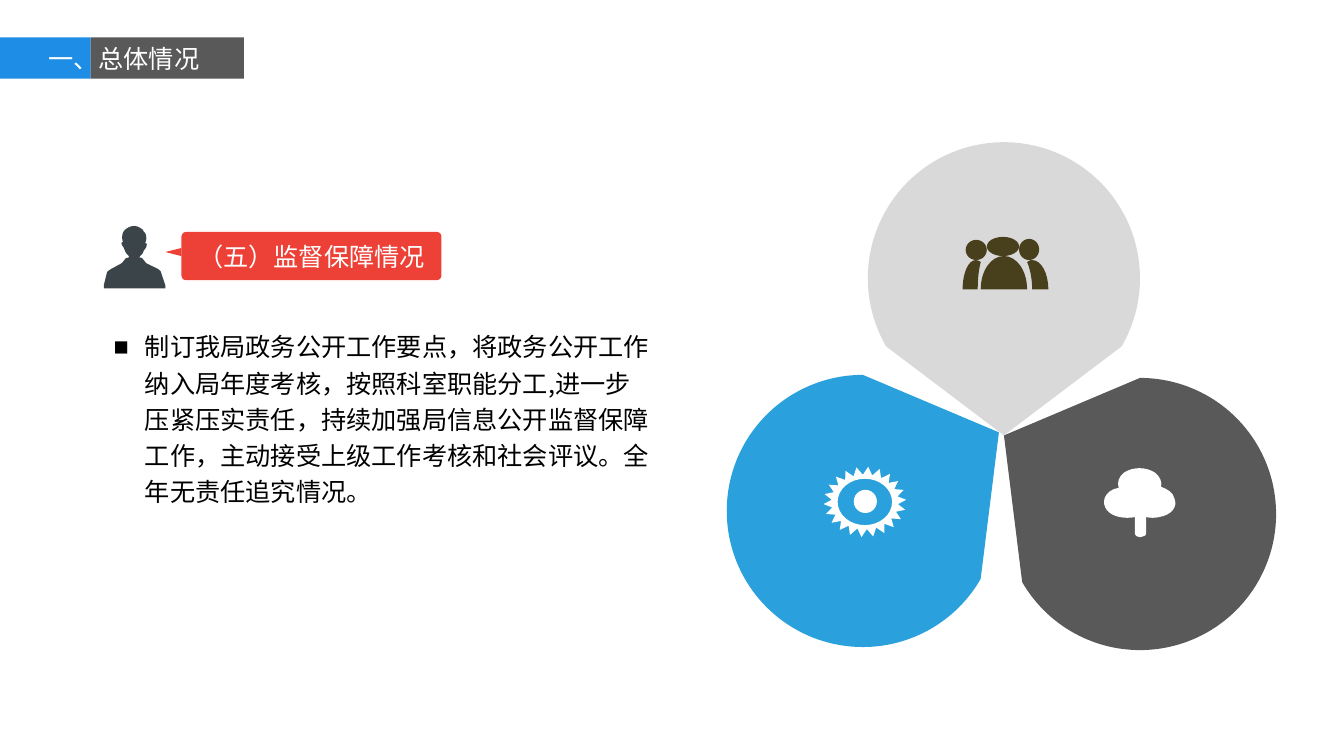
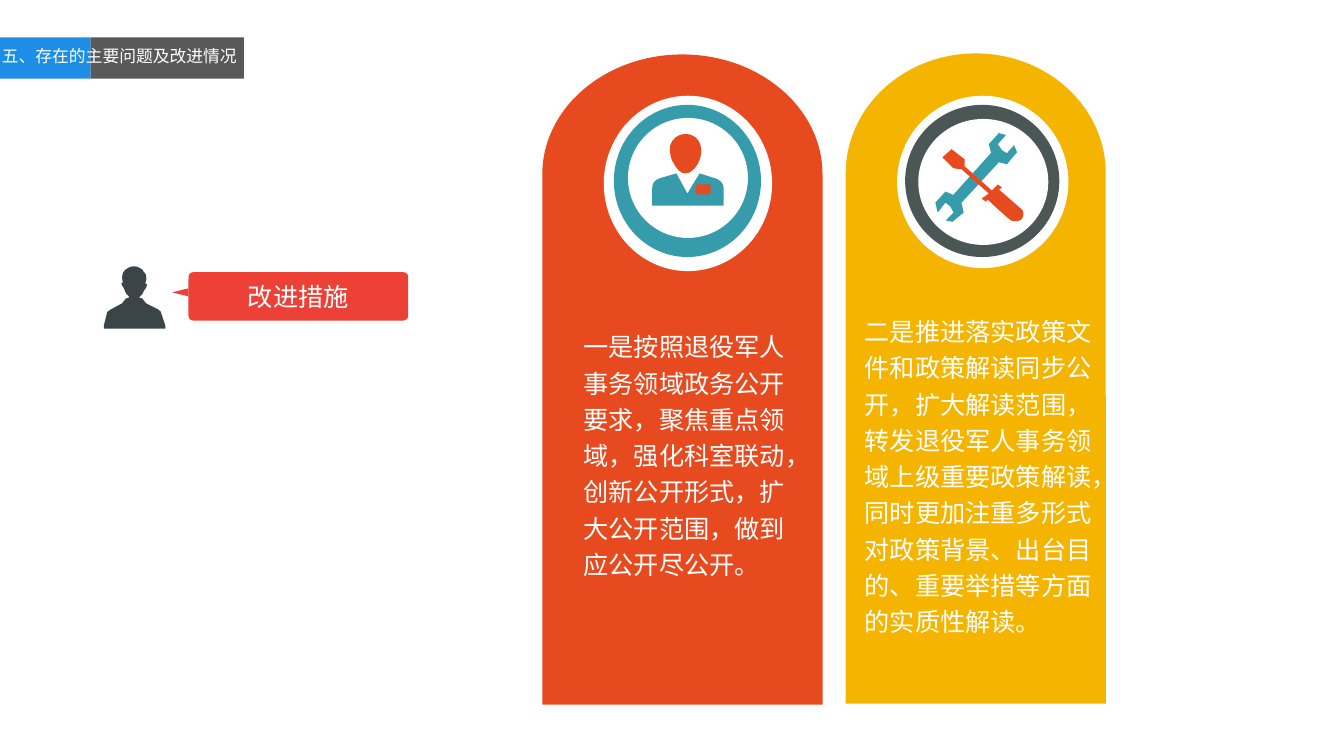
from dataclasses import dataclass
from math import cos, pi, radians, sin, tan

from lxml import etree
from pptx import Presentation
from pptx.dml.color import RGBColor
from pptx.enum.shapes import MSO_SHAPE as SHAPE
from pptx.enum.text import MSO_ANCHOR as ANCHOR, PP_ALIGN as ALIGN
from pptx.oxml.ns import qn
from pptx.util import Inches, Pt


@dataclass(frozen=True)
class Theme:
    white: str = "FFFFFF"
    ink: str = "000000"
    band_blue: str = "1D8DE5"
    dark_grey: str = "595959"
    light_grey: str = "D9D9D9"
    person: str = "3B4449"
    callout: str = "ED4137"
    petal_blue: str = "2AA1DC"
    olive: str = "483F1C"
    orange: str = "E84A1F"
    yellow: str = "F4B400"
    teal: str = "369CAB"
    slate: str = "4B5754"
    latin: str = "Arial"
    cjk: str = "Noto Sans CJK SC"
    body_size: int = 18
    small_size: int = 12


THEME = Theme()

# Icon outlines in hundredths of an inch from the icon's top left corner.
PERSON = """M 57 50 C 57 50 58 49 54 46 L 42 40 L 38 35 C 35 34 34 35 36 33
C 38 32 39 30 40 27 C 40 27 40 26 41 26 C 41 26 45 20 41 20 C 41 20 45 13 39 8
L 39 7 C 37 6 36 5 36 5 C 28 0 21 7 21 7 C 16 12 19 19 19 19 C 15 19 20 25 20 25
C 20 27 21 27 21 27 L 21 28 C 22 30 23 32 25 33 C 26 35 22 35 22 35 L 18 40
L 7 46 C 2 49 3 50 3 50 L 0 62 L 0 65 L 61 65 L 61 62"""
TEAM_BODIES = (
    "M 41 19 C 28 19 18 34 18 52 L 64 52 C 64 34 54 19 41 19",
    "M 18 25 C 17 24 15 23 13 23 C 6 23 0 35 0 52 L 15 52 C 15 42 16 32 18 25",
    "M 69 23 C 68 23 66 23 64 25 C 67 32 69 42 69 52 L 85 52 C 85 36 78 23 69 23",
)
TREE = """M 72 31 C 71 26 65 22 59 20 C 60 15 58 10 53 6 C 44 0 31 0 22 6
C 17 10 15 16 17 21 C 10 22 5 26 3 31 C 0 40 7 48 18 50 C 23 51 28 51 33 50
L 33 67 C 33 68 35 70 38 70 C 41 70 44 68 44 67 L 44 50 C 48 51 53 51 57 50
C 69 48 76 40 72 31"""
WRENCH = """M 78 12 L 81 19 L 71 31 L 63 29 L 26 69 L 28 79 L 17 88 L 11 87
L 11 86 L 18 79 L 15 73 L 10 69 L 3 78 L 2 78 L 0 69 L 10 58 L 17 61 L 18 61
L 55 20 L 55 19 L 53 11 L 63 0 L 70 2 L 62 11 L 66 17 L 71 20"""
SCREWDRIVER = """M 29 33 L 56 57 L 62 51 L 66 54 L 63 56 L 86 76
C 88 78 88 83 85 86 C 82 88 76 88 74 86 C 67 80 59 73 52 66 L 50 68 L 46 65
L 53 60 L 26 36 L 18 35 L 7 24 L 16 16 L 29 26"""
OFFICIAL_SUIT = """M 0 54 C 0 49 2 46 7 44 L 24 39 L 35 59 L 47 39 L 63 44
C 68 46 71 49 71 54 L 71 71 L 0 71"""
OFFICIAL_HEAD = """M 33 39 C 28 39 25 35 22 30 C 18 25 17 17 18 11
C 20 5 25 0 33 0 C 42 0 46 5 48 11 C 50 17 48 25 45 30 C 42 35 38 39 33 39"""
OFFICIAL_BADGE = """M 45 50 L 57 50 C 58 50 58 51 58 52 L 58 58 C 58 59 58 60 57 60
L 45 60 C 44 60 43 59 43 58 L 43 52 C 43 51 44 50 45 50"""


def paint(shape, color):
    shape.fill.solid()
    shape.fill.fore_color.rgb = RGBColor.from_string(color)
    shape.line.fill.background()
    shape.shadow.inherit = False
    return shape


def add_preset(slide, kind, box, color):
    return paint(slide.shapes.add_shape(kind, *map(Inches, box)), color)


def add_outline(slide, color, *contours):
    """Fill contours, each a list of (command, points) steps in inches."""
    pen = None
    for (_, (start,)), *steps in contours:
        if pen is None:
            pen = slide.shapes.build_freeform(*map(Inches, start), scale=1.0)
        else:
            pen.move_to(*map(Inches, start))
        pen.add_line_segments([tuple(map(Inches, point))
                               for _, points in steps for point in points], close=True)
    shape = paint(pen.convert_to_shape(), color)
    lines = iter(list(shape._element.iter(qn("a:lnTo"))))
    for contour in contours:
        for command, points in contour[1:]:
            parts = [next(lines) for _ in points]
            if command == "C":
                bend_lines(parts)


def bend_lines(parts):
    """Merge three line elements into one cubic curve."""
    curve = etree.Element(qn("a:cubicBezTo"))
    parts[0].addprevious(curve)
    for part in parts:
        curve.append(part[0])
        part.getparent().remove(part)


def add_icon(slide, drawing, left, top, color):
    steps, tokens = [], iter(drawing.split())
    for command in tokens:
        count = 3 if command == "C" else 1
        steps.append((command, [(left + float(next(tokens)) / 100,
                                 top + float(next(tokens)) / 100)
                                for _ in range(count)]))
    add_outline(slide, color, steps)


def arc(cx, cy, rx, ry, start, end, pieces):
    """Elliptical arc as a first point followed by cubic curves."""
    turn = radians(end - start) / pieces
    pull = 4 / 3 * tan(turn / 4)

    def at(angle, along=0):
        return (cx + rx * (cos(angle) - along * sin(angle)),
                cy + ry * (sin(angle) + along * cos(angle)))

    angles = [radians(start) + turn * i for i in range(pieces + 1)]
    return [("M", [at(angles[0])])] + [
        ("C", [at(a, pull), at(b, -pull), at(b)]) for a, b in zip(angles, angles[1:])]


def write(frame, text, *, size=THEME.body_size, color=THEME.white, font=THEME.latin,
          align=None, spacing=None, bullet=None, indent=0.31):
    paragraph = frame.paragraphs[0]
    if bullet:
        props = paragraph._p.get_or_add_pPr()
        props.set("marL", str(Inches(indent)))
        props.set("indent", str(-Inches(indent)))
        etree.SubElement(props, qn("a:buFont")).set("typeface", THEME.latin)
        etree.SubElement(props, qn("a:buChar")).set("char", bullet)
    if align is not None:
        paragraph.alignment = align
    if spacing:
        paragraph.line_spacing = spacing
    run = paragraph.add_run()
    run.text = text
    run.font.size = Pt(size)
    run.font.name = font
    run.font.color.rgb = RGBColor.from_string(color)
    east_asian = etree.SubElement(run._r.get_or_add_rPr(), qn("a:ea"))
    east_asian.set("typeface", THEME.cjk)


def add_text(slide, text, box, *, wrap=True, **style):
    frame = slide.shapes.add_textbox(*map(Inches, box)).text_frame
    frame.word_wrap = wrap
    write(frame, text, **style)


def add_layout_bands(layout, slide):
    """Give the layout the two title bands, drawn by way of a slide."""
    for placeholder in list(layout.placeholders):
        layout.shapes._spTree.remove(placeholder._element)
    bands = [add_preset(slide, SHAPE.RECTANGLE, (left, 0.37, width, 0.41), color)
             for left, width, color in ((0, 0.9, THEME.band_blue),
                                        (0.9, 1.52, THEME.dark_grey))]
    for band in bands:
        layout.shapes._spTree.append(band._element)


def add_speaker(slide, label, left, top, width):
    """Person with a speech label whose box starts at left, top."""
    add_icon(slide, PERSON, 1.03, top - 0.09, THEME.person)
    bubble = add_preset(slide, SHAPE.ROUNDED_RECTANGLE, (left, top, width, 0.48),
                        THEME.callout)
    bubble.adjustments[0] = 0.1
    frame = bubble.text_frame
    frame.margin_left = frame.margin_right = frame.margin_top = frame.margin_bottom = 0
    frame.vertical_anchor = ANCHOR.MIDDLE
    write(frame, label, font=THEME.cjk, align=ALIGN.CENTER)
    pointer = add_preset(slide, SHAPE.ISOSCELES_TRIANGLE,
                         (left - 0.12, top + 0.12, 0.08, 0.16), THEME.callout)
    pointer.rotation = 270


def add_petal(slide, tip, direction, color, radius=1.35):
    """Circle drawn out to a 120 degree tip, lying in a direction from that tip."""
    reach, angle = 2 * radius / 3 ** 0.5, radians(direction)
    cx, cy = tip[0] + reach * cos(angle), tip[1] + reach * sin(angle)
    edge = arc(cx, cy, radius, radius, direction - 120, direction + 120, 4)
    add_outline(slide, color, [*edge, ("L", [tip])])


def add_team(slide, left, top):
    for x, y, width, height in ((0.24, 0, 0.32, 0.19), (0.56, 0.02, 0.2, 0.21),
                                (0.03, 0.03, 0.21, 0.2)):
        add_preset(slide, SHAPE.OVAL, (left + x, top + y, width, height), THEME.olive)
    for body in TEAM_BODIES:
        add_icon(slide, body, left, top, THEME.olive)


def add_gear(slide, cx, cy, teeth=22):
    rim = []
    for i in range(2 * teeth):
        angle = i * pi / teeth - radians(3.5)
        rx, ry = (0.33, 0.27) if i % 2 else (0.41, 0.35)
        rim.append(("L", [(cx + rx * cos(angle), cy + ry * sin(angle))]))
    add_preset(slide, SHAPE.OVAL, (cx - 0.11, cy - 0.12, 0.23, 0.23), THEME.white)
    add_outline(slide, THEME.white, rim, arc(cx, cy, 0.27, 0.23, 360, 0, 4))


def add_clover(slide, x, y):
    """Three petals with icons, meeting at x, y."""
    add_petal(slide, (x, y), 30, THEME.dark_grey)
    add_petal(slide, (x - 0.05, y - 0.03), 150, THEME.petal_blue)
    add_petal(slide, (x, y), 270, THEME.light_grey)
    add_team(slide, x - 0.41, y - 1.97)
    add_gear(slide, x - 1.38, y + 0.66)
    add_icon(slide, TREE, x + 0.97, y + 0.31, THEME.white)


def add_column(slide, box, color, medallion, text, text_box, rise=1.19):
    """Arched column; medallion ovals and text are placed from its top left."""
    left, top, width, height = box
    crown = arc(left + width / 2, top + rise, width / 2, rise, 180, 360, 2)
    feet = [("L", [(x, top + height)]) for x in (left + width, left)]
    add_outline(slide, color, crown + feet)
    for (x, y, oval_width, oval_height), fill in medallion:
        add_preset(slide, SHAPE.OVAL, (left + x, top + y, oval_width, oval_height), fill)
    x, y, text_width, text_height = text_box
    add_text(slide, text, (left + x, top + y, text_width, text_height), spacing=1.2)


def add_official(slide, left, top):
    add_icon(slide, OFFICIAL_SUIT, left, top, THEME.teal)
    add_icon(slide, OFFICIAL_HEAD, left, top, THEME.orange)
    add_icon(slide, OFFICIAL_BADGE, left, top, THEME.orange)


def add_tools(slide, left, top):
    add_icon(slide, WRENCH, left, top, THEME.teal)
    add_icon(slide, SCREWDRIVER, left, top, THEME.orange)


def build_supervision(slide):
    add_text(slide, "一、总体情况", (0.38, 0.38, 1.7, 0.4), wrap=False)
    add_text(slide, "制订我局政务公开工作要点，将政务公开工作纳入局年度考核，按照科室职能分工,"
             "进一步压紧压实责任，持续加强局信息公开监督保障工作，主动接受上级工作考核和社会评议。"
             "全年无责任追究情况。", (1.03, 3.18, 5.52, 1.92),
             color=THEME.ink, font=THEME.cjk, spacing=1.2, bullet="■")
    add_speaker(slide, "（五）监督保障情况", 1.8, 2.3, 2.58)
    add_clover(slide, 9.96, 4.32)


def build_improvement(slide):
    add_text(slide, "五、存在的主要问题及改进情况", (-0.08, 0.4, 2.53, 0.34),
             wrap=False, size=THEME.small_size)
    add_speaker(slide, "改进措施", 1.87, 2.7, 2.18)
    add_column(slide, (5.38, 0.54, 2.78, 6.45), THEME.orange,
               (((0.61, 0.41, 1.67, 1.74), THEME.white),
                ((0.71, 0.5, 1.46, 1.51), THEME.teal),
                ((0.85, 0.63, 1.19, 1.19), THEME.white)),
               "一是按照退役军人事务领域政务公开要求，聚焦重点领域，强化科室联动，"
               "创新公开形式，扩大公开范围，做到应公开尽公开。", (0.31, 2.64, 2.26, 3.29))
    add_column(slide, (8.39, 0.53, 2.58, 6.45), THEME.yellow,
               (((0.51, 0.42, 1.7, 1.71), THEME.white),
                ((0.59, 0.51, 1.53, 1.51), THEME.slate),
                ((0.72, 0.65, 1.29, 1.25), THEME.white)),
               "二是推进落实政策文件和政策解读同步公开，扩大解读范围，转发退役军人事务领域"
               "上级重要政策解读，同时更加注重多形式对政策背景、出台目的、重要举措等方面的"
               "实质性解读。", (0.09, 2.5, 2.49, 3.86))
    add_official(slide, 6.47, 1.33)
    add_tools(slide, 9.28, 1.32)


def main():
    deck = Presentation()
    deck.slide_width, deck.slide_height = Inches(40 / 3), Inches(7.5)
    blank = deck.slide_layouts[6]
    supervision, improvement = [deck.slides.add_slide(blank) for _ in range(2)]
    add_layout_bands(blank, supervision)
    build_supervision(supervision)
    build_improvement(improvement)
    deck.save("out.pptx")


if __name__ == "__main__":
    main()
